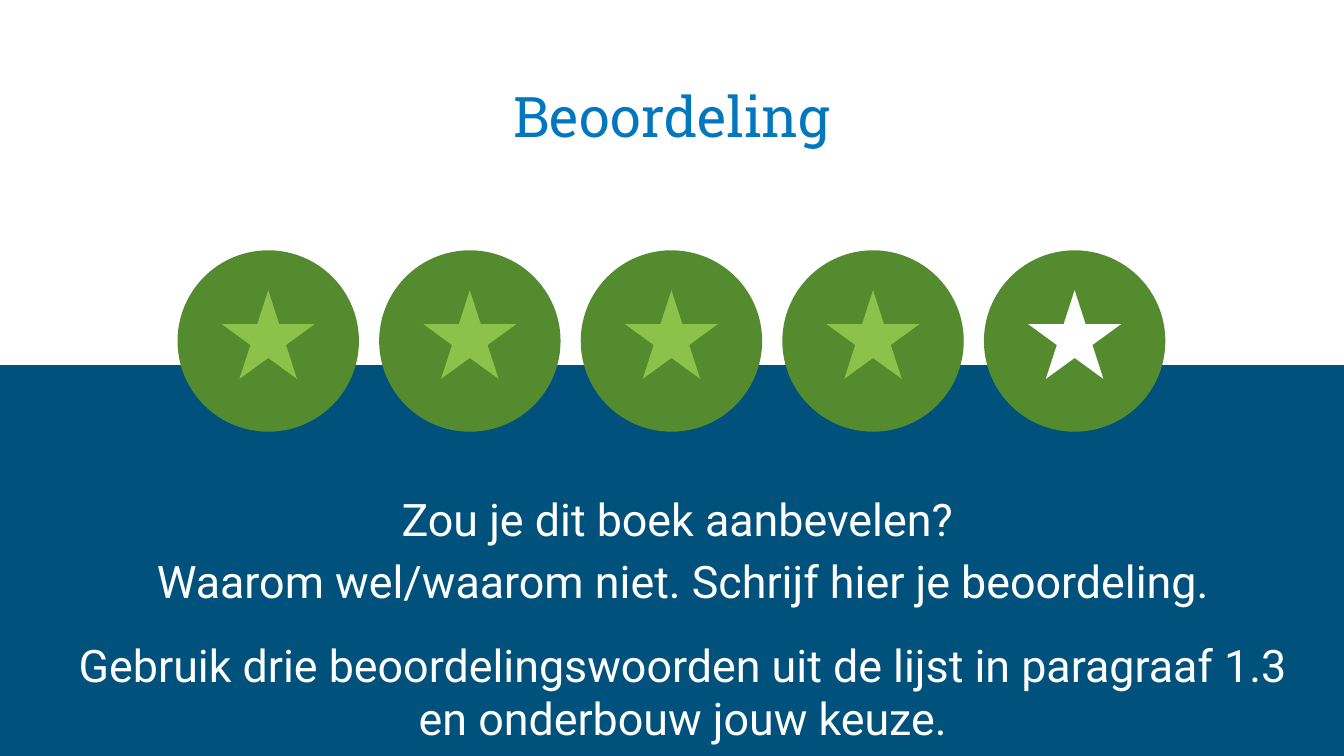
from dataclasses import dataclass

from lxml import etree
from pptx import Presentation
from pptx.dml.color import RGBColor
from pptx.enum.shapes import MSO_SHAPE
from pptx.enum.text import MSO_ANCHOR, MSO_AUTO_SIZE, PP_ALIGN
from pptx.oxml.ns import qn
from pptx.util import Pt

RECTANGLE = MSO_SHAPE.RECTANGLE
OVAL = MSO_SHAPE.OVAL
STAR = MSO_SHAPE.STAR_5_POINT
CENTER = PP_ALIGN.CENTER
TOP = MSO_ANCHOR.TOP
BOTTOM = MSO_ANCHOR.BOTTOM
NO_AUTOFIT = MSO_AUTO_SIZE.NONE


@dataclass(frozen=True)
class Theme:
    navy: str = "00517C"
    white: str = "FFFFFF"
    blue: str = "0277BD"
    badge: str = "558B2F"
    star: str = "8BC34A"
    title_font: str = "Roboto Slab"
    body_font: str = "Roboto"
    title_size: int = 30
    body_size: int = 24


THEME = Theme()
RATING = 4
BADGE_COUNT = 5
FIRST_CENTER = 143.7
BADGE_PITCH = 108
BADGE_TOP = 134.1
BADGE_SIZE = 97.2
STAR_TOP = 155.5
STAR_WIDTH = 49.8
STAR_HEIGHT = 47.5


def add_filled_shape(shapes, kind, left, top, width, height, color):
    shape = shapes.add_shape(kind, Pt(left), Pt(top), Pt(width), Pt(height))
    shape.shadow.inherit = False
    shape.fill.solid()
    shape.fill.fore_color.rgb = RGBColor.from_string(color)
    shape.line.fill.background()
    return shape


def add_top_band(slide):
    band = add_filled_shape(slide.shapes, RECTANGLE, 0, 0, 721.4, 195.6, THEME.white)
    slide.shapes.element.insert(2, band.element)


def add_badge(slide, center, star_color):
    group = slide.shapes.add_group_shape()
    add_filled_shape(group.shapes, OVAL, center - BADGE_SIZE / 2, BADGE_TOP,
                     BADGE_SIZE, BADGE_SIZE, THEME.badge)
    add_filled_shape(group.shapes, STAR, center - STAR_WIDTH / 2, STAR_TOP,
                     STAR_WIDTH, STAR_HEIGHT, star_color)


def fill_placeholder(shape, box, text, anchor, font, size, color):
    shape.left, shape.top, shape.width, shape.height = map(Pt, box)
    frame = shape.text_frame
    frame.text = text
    frame.word_wrap = True
    frame.auto_size = NO_AUTOFIT
    frame.vertical_anchor = anchor
    frame.margin_left = frame.margin_right = Pt(7.2)
    frame.margin_top = frame.margin_bottom = Pt(7.2)
    for paragraph in frame.paragraphs:
        paragraph.alignment = CENTER
        paragraph.line_spacing = 1.0
        paragraph.space_before = Pt(0)
        for run in paragraph.runs:
            run.font.name = font
            run.font.size = Pt(size)
            run.font.color.rgb = RGBColor.from_string(color)


def remove_bullet(paragraph):
    properties = paragraph._p.get_or_add_pPr()
    properties.set("marL", "0")
    properties.set("indent", "0")
    etree.SubElement(properties, qn("a:buNone"))


def add_title(slide):
    fill_placeholder(slide.shapes.title, (24.5, 29.5, 671, 57.6), "Beoordeling",
                     BOTTOM, THEME.title_font, THEME.title_size, THEME.blue)


def add_review(slide):
    body = slide.placeholders[1]
    text = ("Zou je dit boek aanbevelen? \v"
            "Waarom wel/waarom niet. Schrijf hier je beoordeling.\n"
            "Gebruik drie beoordelingswoorden uit de lijst in paragraaf 1.3 "
            "en onderbouw jouw keuze.")
    fill_placeholder(body, (24.5, 252, 682.6, 148.3), text,
                     TOP, THEME.body_font, THEME.body_size, THEME.white)
    question, instruction = body.text_frame.paragraphs
    question.line_spacing = 1.15
    instruction.space_before = Pt(16)
    for paragraph in (question, instruction):
        remove_bullet(paragraph)


def main():
    presentation = Presentation()
    presentation.slide_width = Pt(720)
    presentation.slide_height = Pt(405)
    slide = presentation.slides.add_slide(presentation.slide_layouts[1])
    slide.background.fill.solid()
    slide.background.fill.fore_color.rgb = RGBColor.from_string(THEME.navy)
    add_top_band(slide)
    add_title(slide)
    for index in range(BADGE_COUNT):
        star_color = THEME.star if index < RATING else THEME.white
        add_badge(slide, FIRST_CENTER + index * BADGE_PITCH, star_color)
    add_review(slide)
    presentation.save("out.pptx")


if __name__ == "__main__":
    main()
